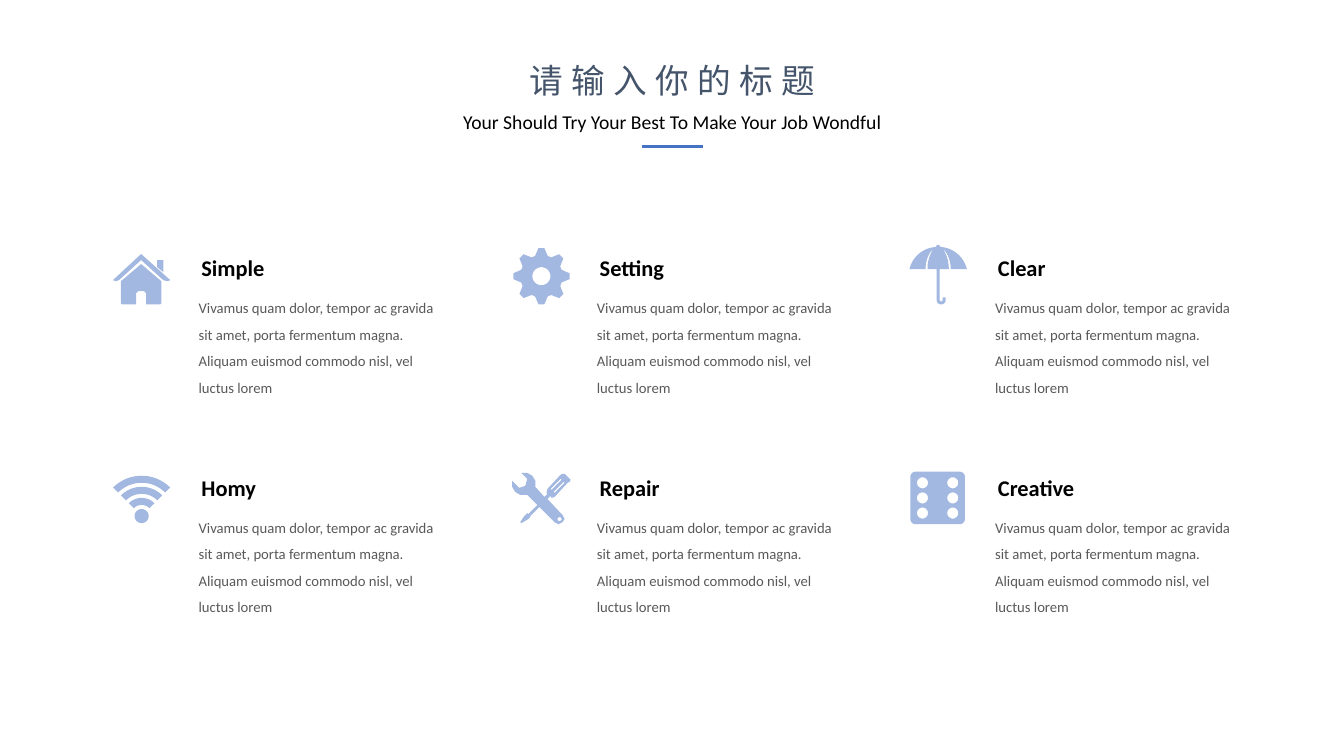
from math import cos, radians, sin

from lxml import etree
from pptx import Presentation
from pptx.dml.color import RGBColor
from pptx.enum.shapes import MSO_CONNECTOR
from pptx.enum.text import MSO_ANCHOR, MSO_AUTO_SIZE, PP_ALIGN
from pptx.oxml.ns import qn
from pptx.util import Inches, Pt

BLACK = RGBColor(0x00, 0x00, 0x00)
GRAY = RGBColor(0x59, 0x59, 0x59)
SLATE = RGBColor(0x44, 0x54, 0x6A)
BLUE = RGBColor(0x44, 0x72, 0xC4)
PALE = RGBColor(0xA2, 0xB8, 0xE1)
FONT = "Calibri"
LEFT, CENTER = PP_ALIGN.LEFT, PP_ALIGN.CENTER
TOP = MSO_ANCHOR.TOP
GROW = MSO_AUTO_SIZE.SHAPE_TO_FIT_TEXT
STRAIGHT = MSO_CONNECTOR.STRAIGHT
BLURB = (
    "Vivamus quam dolor, tempor ac gravida sit amet, porta fermentum magna. "
    "Aliquam euismod commodo nisl, vel luctus lorem"
)


def write(shape, text, size, color=BLACK, bold=False, align=LEFT,
          lead=1.0, wrap=True, inset=(0.1, 0.05), track=0):
    frame = shape.text_frame
    frame.word_wrap = wrap
    frame.auto_size = GROW
    frame.vertical_anchor = TOP
    frame.margin_left = frame.margin_right = Inches(inset[0])
    frame.margin_top = frame.margin_bottom = Inches(inset[1])
    para = frame.paragraphs[0]
    para.alignment = align
    para.line_spacing = lead
    run = para.add_run()
    run.text = text
    font = run.font
    font.name, font.size, font.bold = FONT, Pt(size), bold
    font.color.rgb = color
    if track:
        font._element.set("spc", str(track * 100))


def add_box(slide, x, y, w, h, text, size, **form):
    box = slide.shapes.add_textbox(Inches(x), Inches(y), Inches(w), Inches(h))
    write(box, text, size, **form)


def arc(x, y, r, start=0, end=360, steps=24):
    turns = [radians(start + (end - start) * i / steps) for i in range(steps + 1)]
    return [(x + r * cos(t), y + r * sin(t)) for t in turns]


def curve(a, b, c, d, steps=12):
    points = []
    for i in range(steps + 1):
        t = i / steps
        parts = ((1 - t) ** 3, 3 * t * (1 - t) ** 2, 3 * t * t * (1 - t), t ** 3)
        points.append(tuple(sum(k * p[n] for k, p in zip(parts, (a, b, c, d)))
                            for n in (0, 1)))
    return points


def house():
    walls = [(0.08, 0.36), (0.28, 0.19), (0.48, 0.36), (0.48, 0.58),
             (0.47, 0.59), (0.33, 0.59), (0.33, 0.48), (0.31, 0.46),
             (0.25, 0.46), (0.23, 0.48), (0.23, 0.59), (0.09, 0.59),
             (0.08, 0.58)]
    flue = [(0.44, 0.15), (0.5, 0.15), (0.5, 0.27), (0.44, 0.22)]
    roof = [(0, 0.35), (0.03, 0.36), (0.06, 0.35), (0.28, 0.15),
            (0.5, 0.35), (0.54, 0.36), (0.57, 0.35), (0.28, 0.09)]
    return [walls, flue, roof]


def gear():
    x, y = 0.3, 0.31
    rim = []
    for tooth in range(0, 360, 45):
        for r, turn in ((0.21, -17.5), (0.28, -6), (0.28, 6), (0.21, 17.5)):
            rim += arc(x, y, r, tooth + turn, steps=1)[:1]
    return [rim, arc(x, y, 0.09)]


def brolly():
    def flip(points):
        return [(0.57 - x, y) for x, y in reversed(points)]

    side = (curve((0, 0.24), (0.03, 0.12), (0.13, 0.03), (0.26, 0.02))
            + curve((0.26, 0.02), (0.24, 0.03), (0.16, 0.1), (0.16, 0.24)))
    edge = curve((0.18, 0.24), (0.18, 0.24), (0.17, 0.13), (0.25, 0.02))
    mid = edge + arc(0.285, 0.02, 0.02, 180, 360) + flip(edge)
    stick = ([(0.3, 0.24), (0.27, 0.24)]
             + arc(0.315, 0.545, 0.045, 180, 0)
             + [(0.36, 0.52), (0.33, 0.52)]
             + arc(0.315, 0.545, 0.015, 0, 180))
    return [side, mid, flip(side), stick]


def signal():
    x, y = 0.285, 0.51
    bands = [arc(x, y, far, 225, 315) + arc(x, y, near, 315, 225)
             for far, near in ((0.4, 0.33), (0.29, 0.22), (0.18, 0.11))]
    return bands + [arc(x, y, 0.07)]


def tools():
    rim = [(0.58, 0.14), (0.53, 0.09), (0.51, 0.09), (0.49, 0.1),
           (0.36, 0.24), (0.35, 0.28), (0.36, 0.29), (0.33, 0.32),
           (0.24, 0.22), (0.24, 0.16), (0.21, 0.11), (0.16, 0.08),
           (0.1, 0.08), (0.16, 0.14), (0.14, 0.21), (0.08, 0.23),
           (0.01, 0.16), (0.01, 0.22), (0.04, 0.27), (0.09, 0.3),
           (0.16, 0.3), (0.26, 0.4), (0.17, 0.49), (0.16, 0.48),
           (0.13, 0.51), (0.09, 0.57), (0.1, 0.58), (0.17, 0.54),
           (0.19, 0.52), (0.19, 0.51), (0.28, 0.42), (0.43, 0.57),
           (0.47, 0.59), (0.51, 0.57), (0.53, 0.54), (0.51, 0.5),
           (0.36, 0.34), (0.39, 0.31), (0.4, 0.33), (0.43, 0.32),
           (0.56, 0.18), (0.58, 0.17), (0.59, 0.15)]
    slots = [[(x, y), (x + 0.1, y - 0.1), (x + 0.11, y - 0.09), (x + 0.01, y + 0.01)]
             for x, y in ((0.39, 0.24), (0.42, 0.27))]
    return [rim, arc(0.48, 0.54, 0.02)] + slots


def die():
    rim = []
    for x, y, turn in ((0.06, 0.12, 180), (0.5, 0.12, 270),
                       (0.5, 0.54, 0), (0.06, 0.54, 90)):
        rim += arc(x, y, 0.05, turn, turn + 90)
    pips = [arc(x, y, 0.055) for x in (0.13, 0.43) for y in (0.18, 0.33, 0.48)]
    return [rim] + pips


def add_icon(slide, x, y, paths):
    spots = [[(Inches(x + a), Inches(y + b)) for a, b in ring] for ring in paths]
    form = slide.shapes.build_freeform(*spots[0][0])
    form.add_line_segments(spots[0][1:])
    for ring in spots[1:]:
        form.move_to(*ring[0])
        form.add_line_segments(ring[1:])
    icon = form.convert_to_shape()
    icon.shadow.inherit = False
    icon.fill.solid()
    icon.fill.fore_color.rgb = PALE
    icon.line.fill.background()


def add_item(slide, x, y, name, paths):
    add_icon(slide, x, y, paths)
    add_box(slide, x + 0.78, y + 0.04, 1.2, 0.37, name, 16, bold=True)
    add_box(slide, x + 0.78, y + 0.42, 2.61, 1.1, BLURB, 10.5,
            color=GRAY, lead=1.5, inset=(0.07, 0.03))


def add_head(slide, x, y, w):
    title = slide.shapes.title
    title.left, title.top = Inches(x + (w - 3.15) / 2), Inches(y)
    title.width, title.height = Inches(3.15), Inches(0.43)
    write(title, "请输入你的标题", 24, color=SLATE, align=CENTER,
          lead=0.8, wrap=False, track=6)
    add_box(slide, x, y + 0.47, w, 0.29,
            "Your Should Try Your Best To Make Your Job Wondful", 14,
            align=CENTER, lead=0.8)
    mid, low = x + w / 2, y + 0.83
    rule = slide.shapes.add_connector(STRAIGHT, Inches(mid - 0.3), Inches(low),
                                      Inches(mid + 0.3), Inches(low))
    rule.line.color.rgb = BLUE
    rule.line.width = Pt(2)
    etree.SubElement(rule._element.spPr, qn("a:effectLst"))


def main():
    deck = Presentation()
    deck.slide_width, deck.slide_height = Inches(13.33), Inches(7.5)
    slide = deck.slides.add_slide(deck.slide_layouts[5])
    add_head(slide, 3.85, 0.62, 5.64)
    items = (("Simple", house), ("Setting", gear), ("Clear", brolly),
             ("Homy", signal), ("Repair", tools), ("Creative", die))
    for i, (name, draw) in enumerate(items):
        row, col = divmod(i, 3)
        add_item(slide, 1.12 + 3.95 * col, 2.43 + 2.18 * row, name, draw())
    deck.save("out.pptx")


if __name__ == "__main__":
    main()
